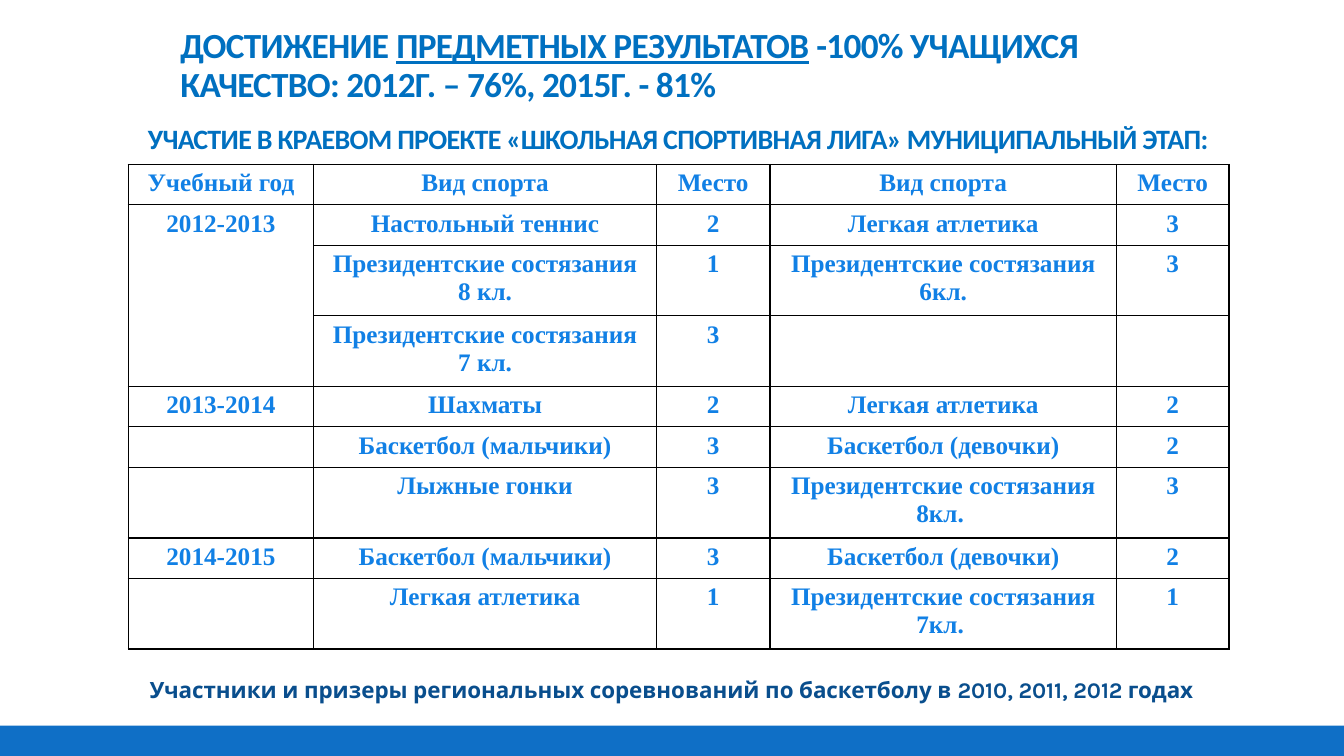
from lxml import etree
from pptx import Presentation
from pptx import util as u
from pptx.dml.color import RGBColor
from pptx.enum import shapes, text
from pptx.oxml.ns import qn

SLIDE_SIZE = (960, 540)
TITLE_LINES = [
    [("ДОСТИЖЕНИЕ ", False), ("ПРЕДМЕТНЫХ РЕЗУЛЬТАТОВ", True), (" -100% УЧАЩИХСЯ", False)],
    [("КАЧЕСТВО: 2012Г. – 76%, 2015Г. - 81%", False)],
]
SUBTITLE = "УЧАСТИЕ В КРАЕВОМ ПРОЕКТЕ «ШКОЛЬНАЯ СПОРТИВНАЯ ЛИГА» МУНИЦИПАЛЬНЫЙ ЭТАП:"
FOOTER = "Участники и призеры региональных соревнований по баскетболу в 2010, 2011, 2012 годах "
RESULTS = [
    ("Учебный год", "Вид спорта", "Место", "Вид спорта", "Место"),
    ("2012-2013", "Настольный теннис", "2", "Легкая атлетика", "3"),
    ("", "Президентские состязания 8 кл.", "1", "Президентские состязания 6кл.", "3"),
    ("", "Президентские состязания 7 кл.", "3", "", ""),
    ("2013-2014", "Шахматы", "2", "Легкая атлетика", "2"),
    ("", "Баскетбол (мальчики)", "3", "Баскетбол (девочки)", "2"),
    ("", "Лыжные гонки", "3", "Президентские состязания 8кл. ", "3"),
    ("2014-2015", "Баскетбол (мальчики)", "3", "Баскетбол (девочки)", "2"),
    ("", "Легкая атлетика", "1", "Президентские состязания 7кл. ", "1"),
]
COLUMN_WIDTHS = [132.5, 244.8, 81.2, 247.4, 80.5]
ONE_LINE, TWO_LINES = 28.9, 50.4
WRAP_LENGTH = 24
MERGED_YEAR_ROWS = (1, 3)

HEADING_STYLE = dict(name="Calibri", color="0070C0", tracking=-50)
CELL_STYLE = dict(name="Times New Roman", size=18, color="1180E5")
FOOTER_STYLE = dict(name="Karla", size=16, color="094E8D")


def rgb(value):
    return RGBColor.from_string(value)


def points(*values):
    return [u.Pt(value) for value in values]


def add_run(paragraph, content, name, size, color, tracking=0, underline=False):
    """Add a bold run; tracking is in hundredths of a point."""
    run = paragraph.add_run()
    run.text = content
    font = run.font
    font.name, font.size, font.bold = name, u.Pt(size), True
    font.color.rgb = rgb(color)
    if underline:
        font.underline = True
    if tracking:
        run._r.get_or_add_rPr().set("spc", str(tracking))


def add_caption(slide, box, content, style, line_spacing=1.0):
    frame = slide.shapes.add_textbox(*points(*box)).text_frame
    frame.word_wrap = True
    paragraph = frame.paragraphs[0]
    paragraph.alignment = text.PP_ALIGN.CENTER
    paragraph.line_spacing = line_spacing
    add_run(paragraph, content, **style)


def add_borders(cell):
    """Draw a thin black line on all four sides, ahead of the fill."""
    properties = cell._tc.get_or_add_tcPr()
    for position, side in enumerate(("a:lnL", "a:lnR", "a:lnT", "a:lnB")):
        line = etree.Element(qn(side), w=str(u.Pt(1)))
        fill = etree.SubElement(line, qn("a:solidFill"))
        etree.SubElement(fill, qn("a:srgbClr"), val="000000")
        properties.insert(position, line)


def add_title(slide):
    title = slide.shapes.title
    title.left, title.top, title.width, title.height = points(121.7, 15.8, 753.8, 62.6)
    frame = title.text_frame
    frame.word_wrap = True
    frame.auto_size = text.MSO_AUTO_SIZE.NONE
    frame.vertical_anchor = text.MSO_ANCHOR.BOTTOM
    paragraph = frame.paragraphs[0]
    paragraph.alignment = text.PP_ALIGN.LEFT
    paragraph.line_spacing = 0.9
    for number, line in enumerate(TITLE_LINES):
        if number:
            paragraph.add_line_break()
        for content, underline in line:
            add_run(paragraph, content, size=25.2, underline=underline, **HEADING_STYLE)


def add_results(slide):
    heights = [TWO_LINES if max(map(len, row)) > WRAP_LENGTH else ONE_LINE for row in RESULTS]
    box = points(91.6, 117.4, sum(COLUMN_WIDTHS), sum(heights))
    table = slide.shapes.add_table(len(RESULTS), len(COLUMN_WIDTHS), *box).table
    table.first_row = table.horz_banding = False
    for column, width in zip(table.columns, COLUMN_WIDTHS):
        column.width = u.Pt(width)
    for row, height, values in zip(table.rows, heights, RESULTS):
        row.height = u.Pt(height)
        for cell, value in zip(row.cells, values):
            cell.fill.background()
            add_borders(cell)
            paragraph = cell.text_frame.paragraphs[0]
            paragraph.alignment = text.PP_ALIGN.CENTER
            if value:
                add_run(paragraph, value, **CELL_STYLE)
            else:
                cell.margin_top = cell.margin_bottom = 0
    first, last = MERGED_YEAR_ROWS
    table.cell(first, 0).merge(table.cell(last, 0))


def add_bottom_bar(slide):
    width, height = SLIDE_SIZE
    thickness = 21.6
    bar = slide.shapes.add_shape(
        shapes.MSO_SHAPE.RECTANGLE, *points(0, height - thickness, width, thickness))
    bar.shadow.inherit = False
    bar.fill.solid()
    bar.fill.fore_color.rgb = rgb("0F6FC6")
    bar.line.fill.background()


def main():
    presentation = Presentation()
    presentation.slide_width, presentation.slide_height = points(*SLIDE_SIZE)
    slide = presentation.slides.add_slide(presentation.slide_layouts[5])
    add_bottom_bar(slide)
    add_title(slide)
    add_caption(slide, (82.1, 83.5, 804.2, 31.7), SUBTITLE, dict(HEADING_STYLE, size=20))
    add_results(slide)
    add_caption(slide, (86.4, 475.9, 791.3, 30.2), FOOTER, FOOTER_STYLE, line_spacing=1.2)
    presentation.save("out.pptx")


if __name__ == "__main__":
    main()
